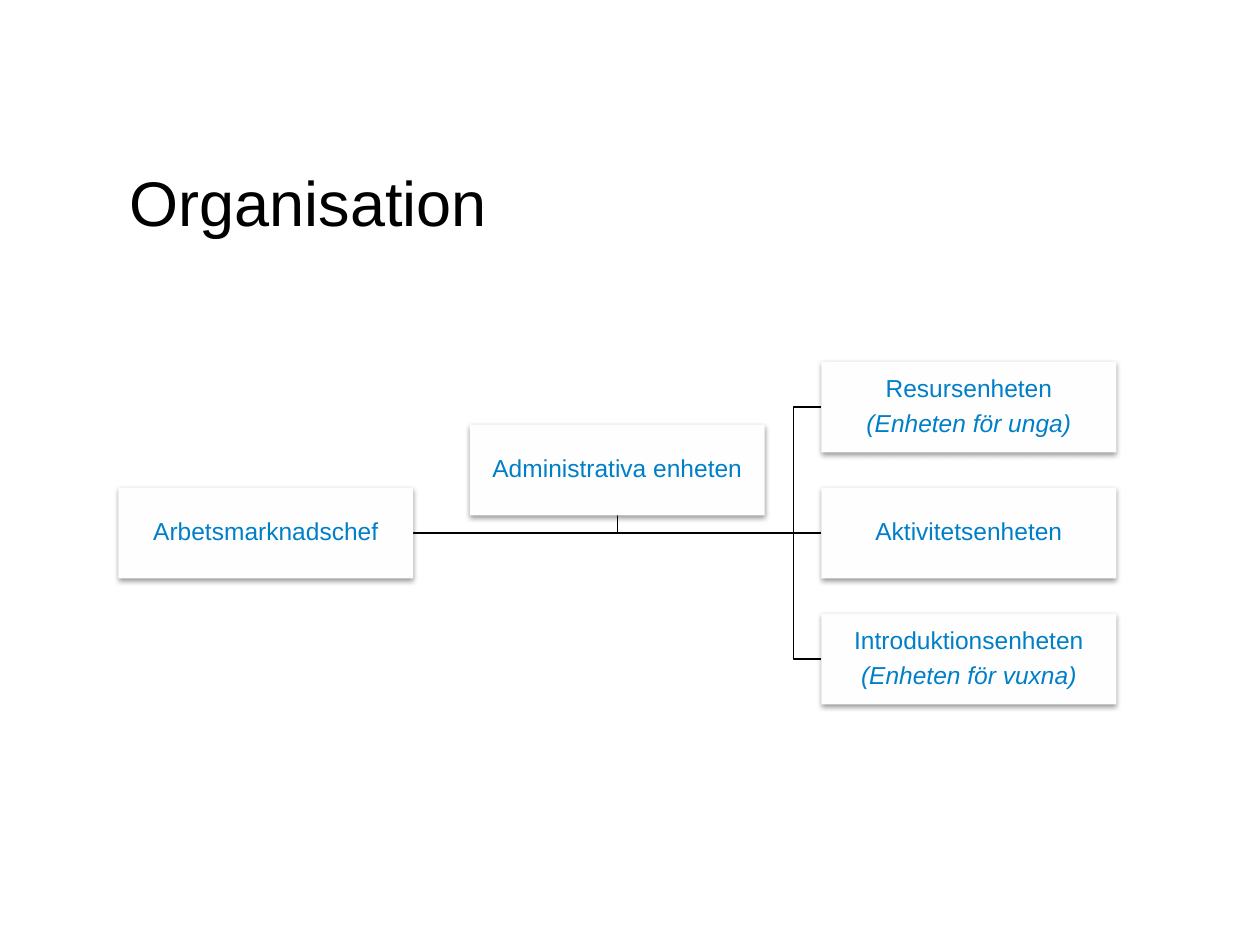
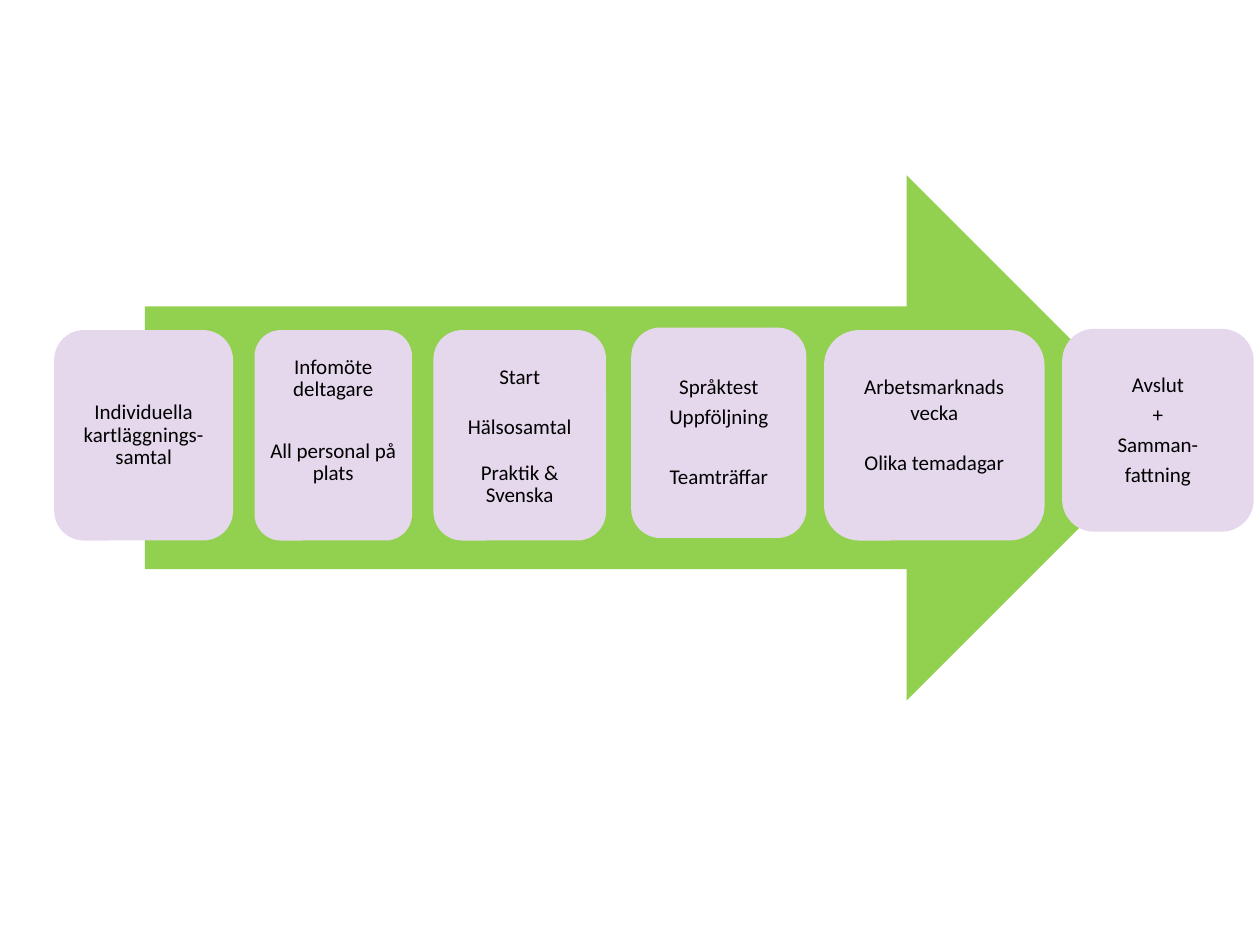
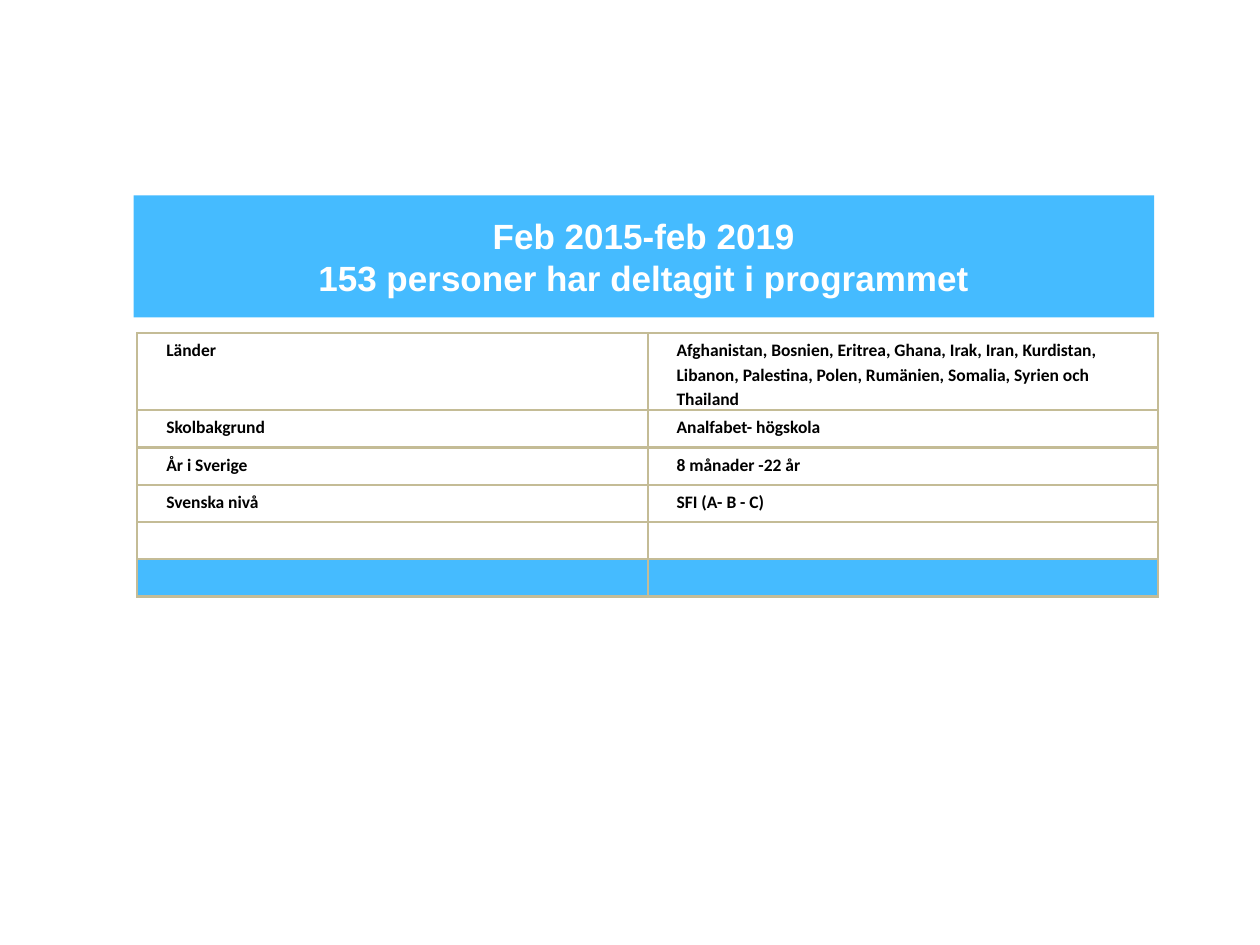
"""Build three slides on a labour market unit: organisation, programme steps and participants."""
import lxml.etree
import pptx
import pptx.dml.color
import pptx.enum.shapes
import pptx.enum.text
import pptx.oxml.ns
import pptx.util

COLORS = {
    "black": "000000", "white": "FFFFFF", "unit": "FEFEFE", "unit_text": "007FC8",
    "arrow": "92D050", "step": "E5D7EC", "band": "45BBFF", "border": "C4BC96",
}
INCH = pptx.util.Inches
PT = pptx.util.Pt
QN = pptx.oxml.ns.qn
ALIGN = pptx.enum.text.PP_ALIGN
SHAPE = pptx.enum.shapes.MSO_SHAPE


def rgb(name):
    return pptx.dml.color.RGBColor.from_string(COLORS[name])


def write(frame, paragraphs, margins=(0.1, 0.05, 0.1, 0.05), anchor="MIDDLE", **shared):
    frame.word_wrap = True
    frame.auto_size = pptx.enum.text.MSO_AUTO_SIZE.NONE
    frame.vertical_anchor = pptx.enum.text.MSO_ANCHOR[anchor]
    frame.margin_left, frame.margin_top, frame.margin_right, frame.margin_bottom = map(INCH, margins)
    for number, (text, own) in enumerate(paragraphs):
        style = {**shared, **own}
        paragraph = frame.paragraphs[0] if number == 0 else frame.add_paragraph()
        paragraph.text = text
        paragraph.alignment = style.get("align", ALIGN.CENTER)
        paragraph.line_spacing = style.get("spacing", 1.0)
        paragraph.space_before = PT(style.get("gap", 0))
        for run in paragraph.runs:
            run.font.name = style["font"]
            run.font.size = PT(style["size"])
            run.font.bold = style.get("bold", False)
            run.font.italic = style.get("italic", False)
            run.font.color.rgb = rgb(style["color"])


deck = pptx.Presentation()
deck.slide_width, deck.slide_height = INCH(10), INCH(7.5)
title_only, blank = deck.slide_layouts[5], deck.slide_layouts[6]

organisation = deck.slides.add_slide(title_only)
heading = organisation.shapes.title
heading.left, heading.top, heading.width, heading.height = map(INCH, (0.93, 0.97, 8.64, 1.25))
write(heading.text_frame, [("Organisation", {})],
      font="Arial", size=36, color="black", align=ALIGN.LEFT)

unit_width, unit_height = 2.34, 0.72
column_lefts = [0.94 + 2.79 * column for column in range(3)]
row_tops = [2.87 + 0.5 * row for row in range(5)]
row_middles = [top + unit_height / 2 for top in row_tops]
chief = (column_lefts[0] + unit_width, row_middles[2])
admin_middle = column_lefts[1] + unit_width / 2
spine = 6.3
branch_end = column_lefts[2]
reporting_lines = [
    [(admin_middle, row_middles[2]), (admin_middle, row_tops[1] + unit_height)],
    [(spine, row_middles[2]), (spine, row_middles[4]), (branch_end, row_middles[4])],
    [(branch_end, row_middles[2])],
    [(spine, row_middles[2]), (spine, row_middles[0]), (branch_end, row_middles[0])],
]
for turns in reporting_lines:
    route = organisation.shapes.build_freeform(*map(INCH, chief))
    route.add_line_segments([(INCH(x), INCH(y)) for x, y in turns], close=False)
    link = route.convert_to_shape()
    link.fill.background()
    link.line.color.rgb = rgb("black")
    link.line.width = PT(0.75)
    link.shadow.inherit = False

units = [
    (0, 2, "Arbetsmarknadschef", None),
    (2, 0, "Resursenheten", "(Enheten för unga)"),
    (2, 2, "Aktivitetsenheten", None),
    (2, 4, "Introduktionsenheten", "(Enheten för vuxna)"),
    (1, 1, "Administrativa enheten", None),
]
for column, row, name, audience in units:
    unit = organisation.shapes.add_shape(
        SHAPE.RECTANGLE,
        *map(INCH, (column_lefts[column], row_tops[row], unit_width, unit_height)))
    unit.fill.solid()
    unit.fill.fore_color.rgb = rgb("unit")
    unit.line.fill.background()
    unit.shadow.inherit = False
    effects = unit._element.spPr.find(QN("a:effectLst"))
    shade = lxml.etree.SubElement(
        effects, QN("a:outerShdw"), blurRad=str(PT(3.1)), dist=str(PT(1.6)),
        dir="5400000", rotWithShape="0")
    shade_color = lxml.etree.SubElement(shade, QN("a:srgbClr"), val=COLORS["black"])
    lxml.etree.SubElement(shade_color, QN("a:alpha"), val="38000")
    labels = [(name, {})]
    if audience:
        labels.append((audience, {"italic": True, "gap": 4.9}))
    write(unit.text_frame, labels, margins=[0.01] * 4,
          font="Arial", size=14, color="unit_text", spacing=0.9)

programme = deck.slides.add_slide(blank)
direction = programme.shapes.add_shape(SHAPE.RIGHT_ARROW, *map(INCH, (1.15, 1.39, 8.13, 4.17)))
direction.fill.solid()
direction.fill.fore_color.rgb = rgb("arrow")
direction.line.fill.background()
direction.shadow.inherit = False

steps = [
    (0.43, 2.62, 1.42, 1.67, 0.05, [("Individuella kartläggnings-samtal", {})]),
    (2.02, 2.62, 1.25, 1.67, 0.28, [
        ("Infomöte deltagare", {}), ("All personal på plats", {"gap": 22})]),
    (3.44, 2.62, 1.37, 1.67, 0.05, [
        ("Start", {"spacing": 1.0}), ("Hälsosamtal", {"spacing": 1.0, "gap": 14.6}),
        ("Praktik &\vSvenska", {"gap": 13})]),
    (5.01, 2.6, 1.39, 1.67, 0.05, [
        ("Språktest", {}), ("Uppföljning", {"gap": 4.2}), ("Teamträffar", {"gap": 21.5})]),
    (6.54, 2.62, 1.75, 1.67, 0.22, [
        ("Arbetsmarknads\vvecka", {"spacing": 1.0}),
        ("Olika temadagar", {"spacing": 1.0, "gap": 14.6})]),
    (8.43, 2.61, 1.52, 1.61, 0.05, [
        ("Avslut", {}), ("+", {"gap": 4.2}), ("Samman-", {"gap": 4.2}),
        ("fattning", {"gap": 4.2})]),
]
for left, top, width, height, bottom_margin, content in steps:
    step = programme.shapes.add_shape(
        SHAPE.ROUNDED_RECTANGLE, *map(INCH, (left, top, width, height)))
    step.fill.solid()
    step.fill.fore_color.rgb = rgb("step")
    step.line.fill.background()
    step.shadow.inherit = False
    write(step.text_frame, content, margins=(0.05, 0.05, 0.05, bottom_margin),
          font="Calibri", size=12, color="black", spacing=0.9)

participants = deck.slides.add_slide(title_only)
band = participants.shapes.title
band.left, band.top, band.width, band.height = map(INCH, (1.06, 1.55, 8.1, 0.97))
band.fill.solid()
band.fill.fore_color.rgb = rgb("band")
write(band.text_frame, [("Feb 2015-feb 2019\v153 personer har deltagit i programmet", {})],
      font="Arial", size=20, color="white", bold=True)

facts = [
    ("Länder", "Afghanistan, Bosnien, Eritrea, Ghana, Irak, Iran, Kurdistan, Libanon, "
               "Palestina, Polen, Rumänien, Somalia, Syrien och Thailand"),
    ("Skolbakgrund", "Analfabet- högskola"),
    ("År i Sverige", "8 månader -22 år"),
    ("Svenska nivå", "SFI (A- B - C)"),
    ("", ""),
    ("", ""),
]
table_height, countries_height = 2.08, 0.6
overview = participants.shapes.add_table(
    len(facts), 2, *map(INCH, (1.09, 2.645, 8.1, table_height))).table
overview.first_row = overview.horz_banding = False
for row, fact in enumerate(facts):
    shared_height = (table_height - countries_height) / (len(facts) - 1)
    overview.rows[row].height = INCH(shared_height if row else countries_height)
    for column, text in enumerate(fact):
        cell = overview.cell(row, column)
        properties = cell._tc.get_or_add_tcPr()
        for side in ("lnL", "lnR", "lnT", "lnB"):
            edge = lxml.etree.SubElement(properties, QN("a:" + side), w=str(PT(1.5)))
            edge_fill = lxml.etree.SubElement(edge, QN("a:solidFill"))
            lxml.etree.SubElement(edge_fill, QN("a:srgbClr"), val=COLORS["border"])
        cell.fill.solid()
        cell.fill.fore_color.rgb = rgb("band" if row == len(facts) - 1 else "white")
        cell.margin_left, cell.margin_right = INCH(0.23), INCH(0.03)
        cell.margin_top, cell.margin_bottom = INCH(0.03), INCH(0)
        if text:
            write(cell.text_frame, [(text, {})], margins=(0.23, 0.03, 0.03, 0), anchor="TOP",
                  font="Calibri", size=10, color="black", bold=True,
                  align=ALIGN.LEFT, spacing=1.15)
        else:
            lxml.etree.SubElement(
                cell.text_frame.paragraphs[0]._p, QN("a:endParaRPr"), sz="1000")

deck.save("out.pptx")
